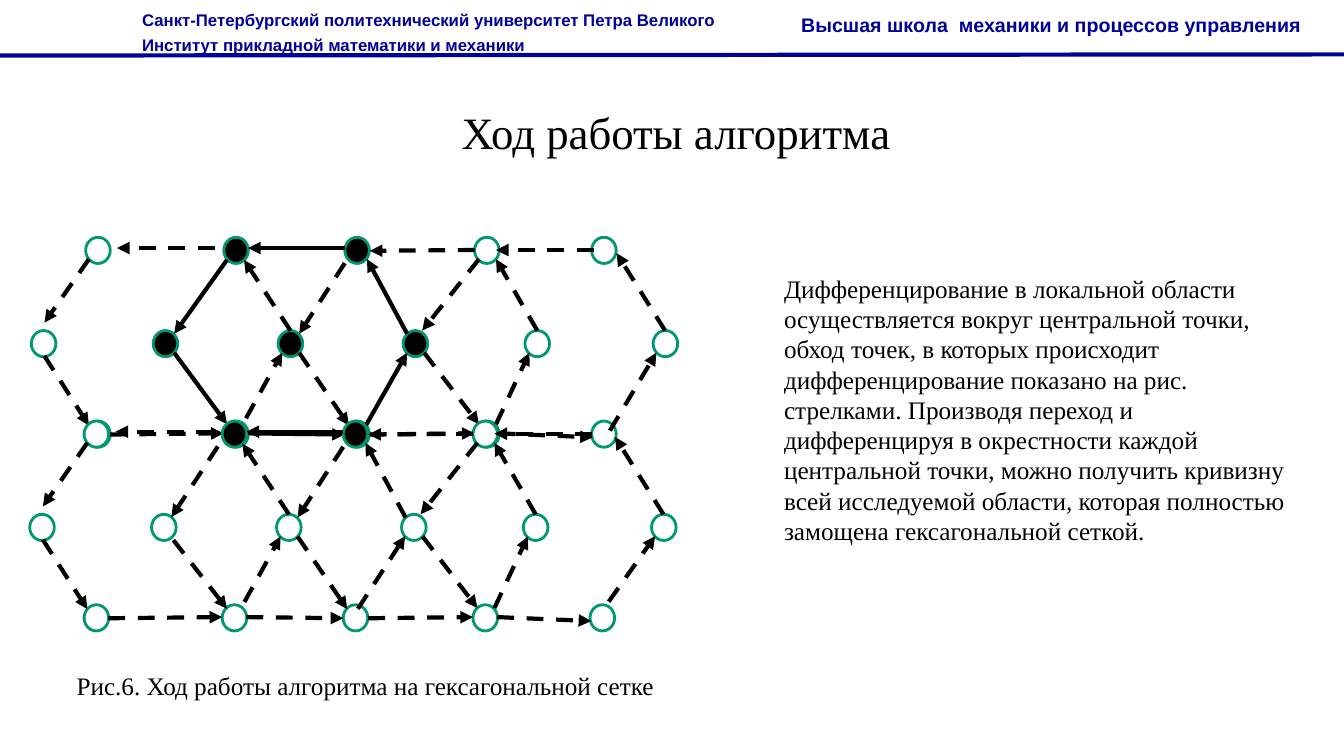
from dataclasses import dataclass
from typing import NamedTuple, Optional

from pptx import Presentation
from pptx.dml.color import RGBColor
from pptx.enum.dml import MSO_LINE
from pptx.enum.shapes import MSO_CONNECTOR as Connector, MSO_SHAPE as Preset
from pptx.enum.text import MSO_ANCHOR as Anchor, MSO_AUTO_SIZE as AutoSize, PP_ALIGN as Align
from pptx.oxml.xmlchemy import OxmlElement
from pptx.util import Cm, Pt

NAVY = RGBColor(0x00, 0x00, 0x99)
BLACK = RGBColor(0x00, 0x00, 0x00)
WHITE = RGBColor(0xFF, 0xFF, 0xFF)
GREEN = RGBColor(0x00, 0x97, 0x71)

NODE_WIDTH, NODE_HEIGHT = 0.62, 0.66
NODE_FILLS = {"b": BLACK, "w": WHITE, "n": None}
EDGE_COLUMNS = (2.16, 5.64, 8.69, 11.96, 14.91)
MIDDLE_COLUMNS = (0.79, 3.86, 7.01, 10.16, 13.23, 16.46)
ROWS = ((5.98, EDGE_COLUMNS), (8.33, MIDDLE_COLUMNS), (10.61, EDGE_COLUMNS))


class Arrow(NamedTuple):
    x1: float
    y1: float
    x2: float
    y2: float


@dataclass(frozen=True)
class Tier:
    dx: float
    dy: float
    fills: tuple[str, ...]
    solid: tuple[Arrow, ...]
    dashed: tuple[Arrow, ...]


@dataclass(frozen=True)
class Caption:
    lines: tuple[str, ...]
    box: tuple[float, float, float, float]
    font: dict
    color: RGBColor
    spacing: float = 1.0
    wrap: bool = True


HEXAGON_TOP = Arrow(8.69, 6.25, 6.25, 6.25)
HEXAGON_RISE = Arrow(10.26, 8.41, 9.25, 6.53)
HEXAGON_BOTTOM = Arrow(6.25, 10.92, 8.69, 10.95)
COMMON_PATH = (
    Arrow(5.41, 6.25, 2.95, 6.25),
    Arrow(2.24, 6.53, 1.12, 8.13),
    Arrow(1.12, 8.97, 2.24, 10.72),
    Arrow(2.77, 10.95, 5.64, 10.92),
    Arrow(6.2, 10.54, 7.11, 8.89),
    Arrow(7.32, 8.33, 6.15, 6.55),
    Arrow(9.32, 10.95, 11.96, 10.92),
    Arrow(7.54, 8.89, 8.79, 10.72),
    Arrow(8.69, 6.63, 7.54, 8.41),
    Arrow(11.96, 6.3, 9.32, 6.32),
    Arrow(13.54, 8.33, 12.5, 6.53),
    Arrow(12.5, 10.69, 13.34, 8.89),
    Arrow(14.96, 6.3, 12.5, 6.3),
    Arrow(12.07, 6.53, 10.64, 8.33),
    Arrow(10.69, 8.89, 12.07, 10.69),
    Arrow(12.57, 10.92, 14.94, 11.02),
    Arrow(16.76, 8.33, 15.54, 6.38),
)
UPPER = Tier(
    0, 0, ("wbbwn", "wbbbnn", "nbbnn"),
    (
        HEXAGON_TOP, HEXAGON_RISE, HEXAGON_BOTTOM,
        Arrow(5.72, 6.55, 4.39, 8.41),
        Arrow(4.39, 8.89, 5.72, 10.69),
        Arrow(9.22, 10.72, 10.26, 8.89),
    ),
    (Arrow(15.37, 10.85, 16.54, 8.89),),
)
LOWER = Tier(
    -0.04, 4.63, ("wbbw", "wnnnnn", "nnnnn"),
    (HEXAGON_TOP,),
    (
        HEXAGON_RISE, HEXAGON_BOTTOM,
        Arrow(5.53, 6.62, 4.36, 8.4),
        Arrow(4.41, 8.98, 5.76, 10.71),
        Arrow(9.06, 10.71, 10.25, 8.88),
        Arrow(15.38, 10.53, 16.55, 8.88),
    ),
)

SERIF = "Times New Roman"
HEADING = Caption(
    ("Ход работы алгоритма",), (11.38, 2.51, 11.43, 1.63),
    {"name": SERIF, "size": Pt(32)}, BLACK, wrap=False,
)
CAPTIONS = (
    Caption(
        ("Санкт-Петербургский политехнический университет Петра Великого",
         "Институт прикладной математики и механики"),
        (3.33, 0.03, 15.67, 1.42),
        {"name": "Arial", "size": Pt(12), "bold": True}, NAVY, 1.2,
    ),
    Caption(
        ("Высшая школа  механики и процессов управления",),
        (19.94, 0.08, 15.6, 0.97),
        {"name": "Arial", "size": Pt(14), "bold": True}, NAVY, 1.2,
    ),
    Caption(
        ("Дифференцирование в локальной области осуществляется вокруг "
         "центральной точки, обход точек, в которых происходит "
         "дифференцирование показано на рис. стрелками. Производя переход и "
         "дифференцируя в окрестности каждой центральной точки, можно "
         "получить кривизну всей исследуемой области, которая полностью "
         "замощена гексагональной сеткой.",),
        (19.51, 6.76, 13.16, 7.19),
        {"name": SERIF, "size": Pt(18)}, BLACK,
    ),
    Caption(
        ("Рис.6. Ход работы алгоритма на гексагональной сетке",),
        (1.68, 16.76, 15.54, 1.02),
        {"name": SERIF, "size": Pt(18)}, BLACK, wrap=False,
    ),
)


def write_caption(holder, caption: Caption) -> None:
    for side, length in zip(("left", "top", "width", "height"), caption.box):
        setattr(holder, side, Cm(length))
    frame = holder.text_frame
    layout = {"word_wrap": caption.wrap, "auto_size": AutoSize.SHAPE_TO_FIT_TEXT,
              "vertical_anchor": Anchor.TOP}
    for key, value in layout.items():
        setattr(frame, key, value)
    paragraph = frame.paragraphs[0]
    paragraph.alignment = Align.LEFT
    paragraph.line_spacing = caption.spacing
    for index, line in enumerate(caption.lines):
        if index:
            paragraph.add_line_break()
        run = paragraph.add_run()
        run.text = line
        for key, value in caption.font.items():
            setattr(run.font, key, value)
        run.font.color.rgb = caption.color


def draw_line(slide, course: Arrow, color: RGBColor, dashed: bool = False,
              head: bool = True) -> None:
    line = slide.shapes.add_connector(Connector.STRAIGHT, *(Cm(v) for v in course))
    line.line.color.rgb = color
    line.line.width = Pt(3)
    if dashed:
        line.line.dash_style = MSO_LINE.DASH
    if head:
        tail = OxmlElement("a:tailEnd")
        tail.set("type", "triangle")
        line.line._get_or_add_ln().append(tail)
    line._element.spPr.append(OxmlElement("a:effectLst"))


def draw_node(slide, x: float, y: float, fill: Optional[RGBColor]) -> None:
    node = slide.shapes.add_shape(
        Preset.OVAL, Cm(x), Cm(y), Cm(NODE_WIDTH), Cm(NODE_HEIGHT))
    node.shadow.inherit = False
    if fill is None:
        node.fill.background()
    else:
        node.fill.solid()
        node.fill.fore_color.rgb = fill
    node.line.color.rgb = GREEN
    node.line.width = Pt(2)


def draw_tier(slide, tier: Tier) -> None:
    for (y, columns), fills in zip(ROWS, tier.fills):
        for x, fill in zip(columns, fills):
            draw_node(slide, x + tier.dx, y + tier.dy, NODE_FILLS[fill])
    for arrows, dashed in ((tier.solid, False), (COMMON_PATH + tier.dashed, True)):
        for x1, y1, x2, y2 in arrows:
            shifted = Arrow(x1 + tier.dx, y1 + tier.dy, x2 + tier.dx, y2 + tier.dy)
            draw_line(slide, shifted, BLACK, dashed)


def main() -> None:
    deck = Presentation()
    deck.slide_width, deck.slide_height = Cm(33.87), Cm(19.05)
    slide = deck.slides.add_slide(deck.slide_layouts[5])
    write_caption(slide.shapes.title, HEADING)
    draw_line(slide, Arrow(0, 1.4, 33.87, 1.37), NAVY, head=False)
    for tier in (UPPER, LOWER):
        draw_tier(slide, tier)
    for caption in CAPTIONS:
        write_caption(slide.shapes.add_textbox(0, 0, 0, 0), caption)
    deck.save("out.pptx")


if __name__ == "__main__":
    main()
